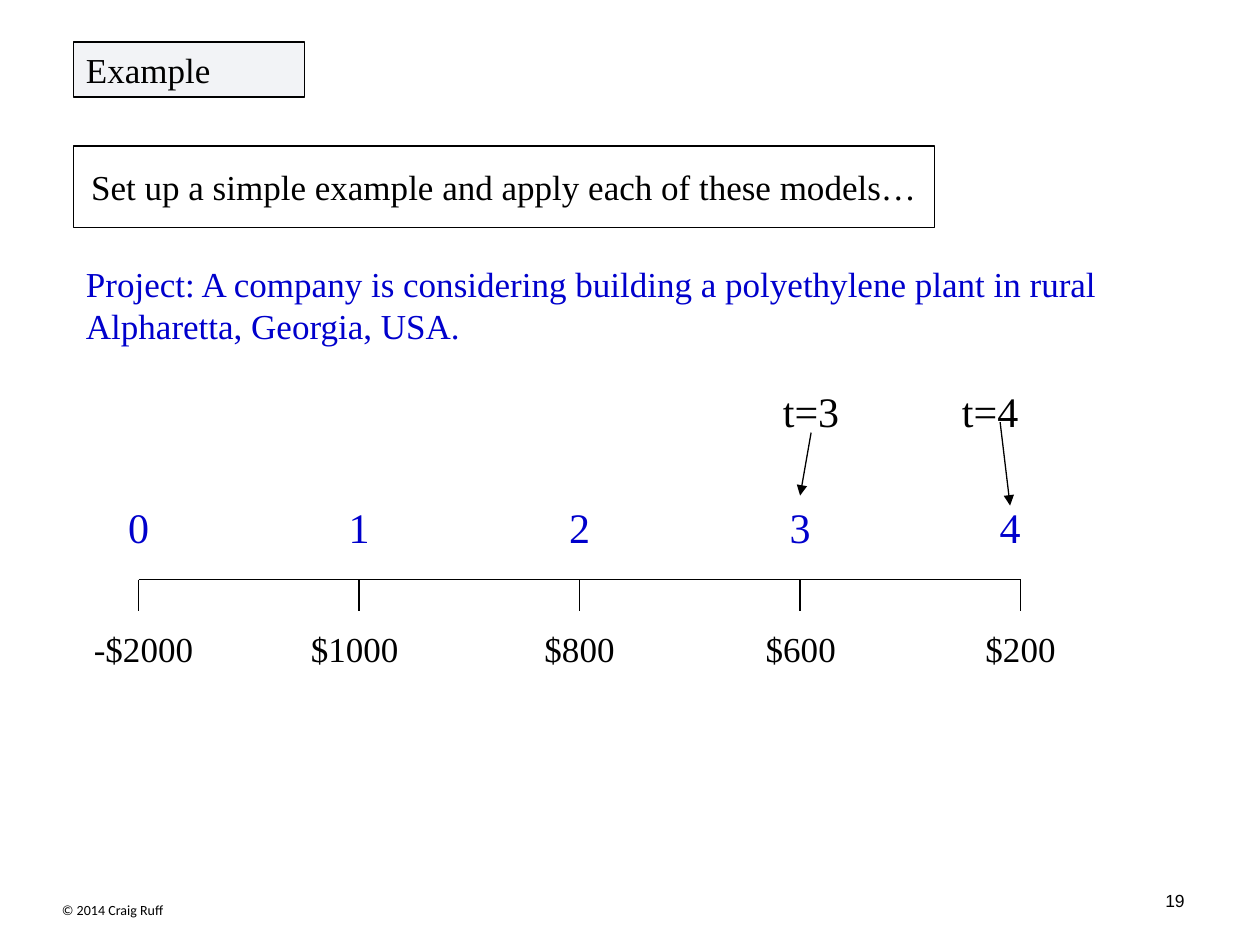
import pptx
import pptx.util
import pptx.dml.color
import pptx.enum.shapes
import pptx.enum.text
import pptx.oxml
import pptx.oxml.ns

Pt = pptx.util.Pt
ALIGN = pptx.enum.text.PP_ALIGN
ANCHOR = pptx.enum.text.MSO_ANCHOR
SERIF = "Times New Roman"
BLACK, BLUE, NAVY = "000000", "0000CC", "002060"


def color(value):
    return pptx.dml.color.RGBColor.from_string(value)


def write(left, top, width, height, text, size=20, ink=BLACK, font=SERIF,
          align=ALIGN.CENTER, anchor=ANCHOR.TOP, framed=False):
    area = Pt(left), Pt(top), Pt(width), Pt(height)
    if framed:
        box = slide.shapes.add_shape(pptx.enum.shapes.MSO_SHAPE.RECTANGLE, *area)
        box.shadow.inherit = False
        box.fill.background()
        box.line.color.rgb = color(BLACK)
        box.line.width = Pt(0.75)
    else:
        box = slide.shapes.add_textbox(*area)
    frame = box.text_frame
    frame.word_wrap = True
    frame.vertical_anchor = anchor
    frame.text = text
    paragraph = frame.paragraphs[0]
    paragraph.alignment = align
    run_font = paragraph.runs[0].font
    run_font.size = Pt(size)
    run_font.name = font
    run_font.color.rgb = color(ink)
    return box


def draw_line(x1, y1, x2, y2, arrow=False):
    line = slide.shapes.add_connector(
        pptx.enum.shapes.MSO_CONNECTOR.STRAIGHT, Pt(x1), Pt(y1), Pt(x2), Pt(y2))
    line.line.color.rgb = color(BLACK)
    line.line.width = Pt(0.75)
    properties = line._element.spPr
    if arrow:
        tail = pptx.oxml.ns.qn("a:tailEnd")
        properties.find(pptx.oxml.ns.qn("a:ln")).append(
            properties.makeelement(tail, {"type": "triangle"}))
    properties.append(properties.makeelement(pptx.oxml.ns.qn("a:effectLst"), {}))


deck = pptx.Presentation()
deck.slide_width, deck.slide_height = Pt(720), Pt(540)
slide = deck.slides.add_slide(deck.slide_layouts[6])

axis_left, axis_top, step = 79.2, 331.2, 126
cash_flows = [("-$2000", 82, 78), ("$1000", 202.7, 90), ("$800", 331.2, 108),
              ("$600", 457.6, 84), ("$200", 583.2, 72)]
year_centers = [79.2, 205.2, 331.2, 457.2, 577.2]

for year, (amount, center, width) in enumerate(cash_flows):
    tick = axis_left + step * year
    draw_line(tick, axis_top, tick, axis_top + 18)
    write(center - width / 2, 355.2, width, 31, amount)
    write(year_centers[year] - 30, 283.2, 60, 36, str(year), 24, BLUE)
draw_line(axis_left, axis_top, axis_left + 4 * step, axis_top)

for label, left, arrow in [("t=3 ", 415.4, (463.5, 247.2, 457.2, 283.2)),
                           ("t=4 ", 517.7, (571.5, 241.2, 577.2, 288.9))]:
    write(left, 216.7, 102.2, 36, label, 24)
    draw_line(*arrow, arrow=True)

write(516, 500.4, 168, 28.8, "19", 10, font="Arial", align=ALIGN.RIGHT,
      anchor=ANCHOR.MIDDLE)
write(20.9, 511.9, 87, 17, "© 2014 Craig Ruff", 8, font="Calibri")

write(42, 83.4, 492, 46.8, "Set up a simple example and apply each of these models…",
      anchor=ANCHOR.MIDDLE, framed=True)
write(42, 146.2, 660, 55.7,
      "Project: A company is considering building a polyethylene plant in rural "
      "Alpharetta, Georgia, USA.", ink=BLUE, align=ALIGN.LEFT)

heading = write(42, 24, 132, 31.5, "Example", align=ALIGN.LEFT, framed=True)
heading.fill.solid()
heading.fill.fore_color.rgb = color(NAVY)
tint = heading._element.spPr.find(".//" + pptx.oxml.ns.qn("a:srgbClr"))
tint.append(tint.makeelement(pptx.oxml.ns.qn("a:alpha"), {"val": "5000"}))

deck.save("out.pptx")
